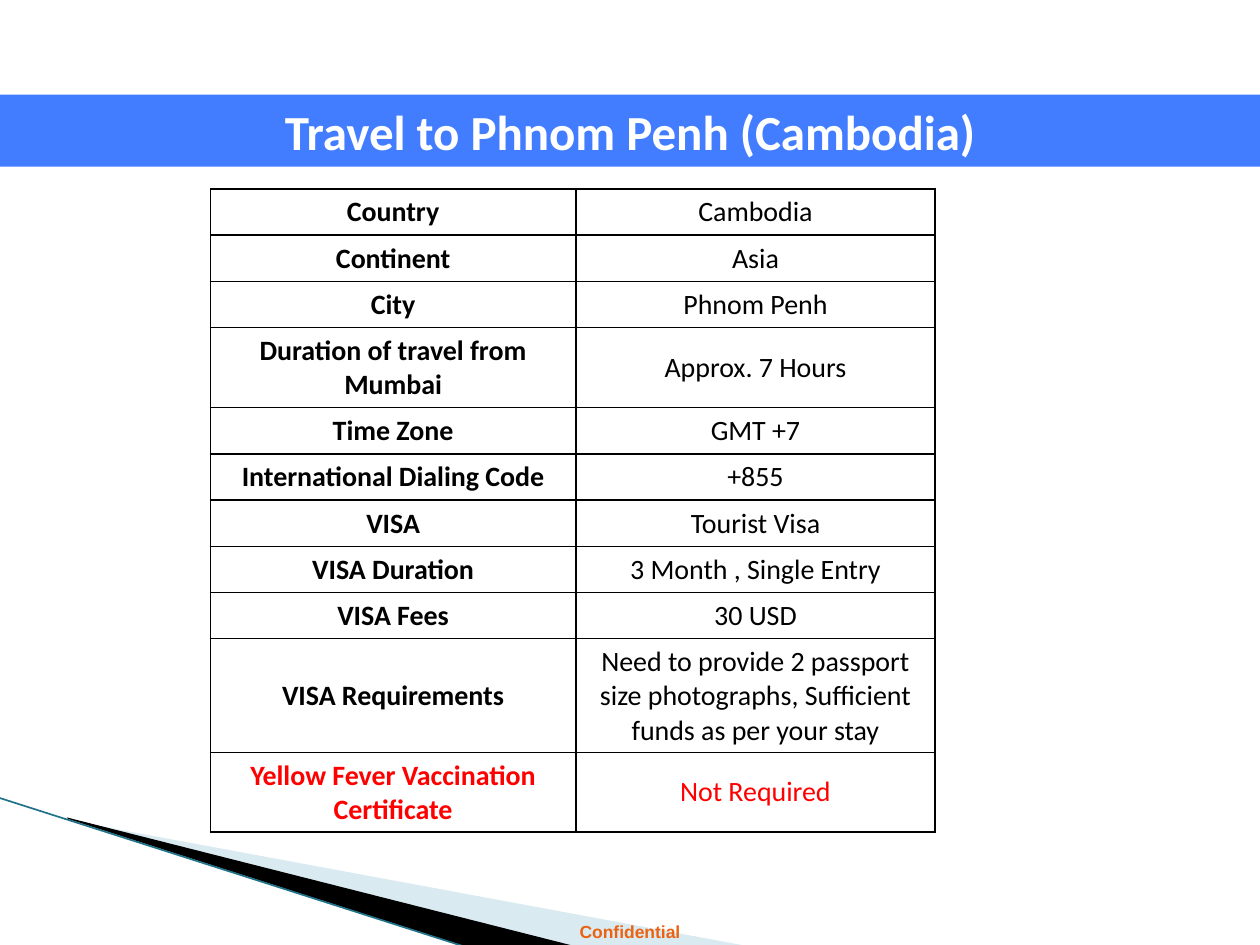
from dataclasses import dataclass

from lxml import etree
from pptx import Presentation
from pptx import util as u
from pptx.dml import color
from pptx.enum import shapes, text
from pptx.oxml import ns


@dataclass(frozen=True)
class Theme:
    banner: str = "437DFF"
    white: str = "FFFFFF"
    ink: str = "000000"
    alert: str = "FF0000"
    notice: str = "EB6312"
    wedge: str = "A0CBDC"
    edge: str = "1F7287"
    body_font: str = "Calibri"
    notice_font: str = "Arial"
    title_size: int = 28
    table_size: int = 16
    notice_size: int = 10
    border: float = 1
    edge_width: float = 0.95


THEME = Theme()
PAGE_WIDTH, PAGE_HEIGHT = 25.4, 19.05

FACTS = [
    ("Country", "Cambodia", 1),
    ("Continent", "Asia", 1),
    ("City", "Phnom Penh", 1),
    ("Duration of travel from Mumbai", "Approx. 7 Hours", 2),
    ("Time Zone", "GMT +7", 1),
    ("International Dialing Code", "+855", 1),
    ("VISA", "Tourist Visa", 1),
    ("VISA Duration", "3 Month , Single Entry", 1),
    ("VISA Fees", "30 USD", 1),
    ("VISA Requirements", "Need to provide 2 passport size photographs, "
     "Sufficient funds as per your stay", 3),
    ("Yellow Fever Vaccination Certificate", "Not Required", 2),
]
COLUMN_WIDTHS = (7.37, 7.24)
LINE_HEIGHT, ROW_PADDING = 0.68, 0.25


def rgb(value):
    return color.RGBColor.from_string(value)


def add_element(parent, tag, **attributes):
    return etree.SubElement(parent, ns.qn(tag), attributes)


def fill_solid(target, value):
    target.fill.solid()
    target.fill.fore_color.rgb = rgb(value)


def write_text(frame, words, ink, **formats):
    para = frame.paragraphs[0]
    para.alignment = text.PP_ALIGN.CENTER
    span = para.add_run()
    span.text = words
    span.font.color.rgb = rgb(ink)
    for name, value in formats.items():
        setattr(span.font, name, value)


def place(box, left, top, width, height):
    lengths = {"left": left, "top": top, "width": width, "height": height}
    for name, value in lengths.items():
        setattr(box, name, u.Cm(value))


def add_title(page, words):
    title = page.shapes.title
    place(title, 0, 1.91, PAGE_WIDTH, 1.45)
    fill_solid(title, THEME.banner)
    title.text_frame.vertical_anchor = text.MSO_ANCHOR.MIDDLE
    write_text(title.text_frame, words, THEME.white, bold=True,
               size=u.Pt(THEME.title_size), name=THEME.body_font)


def add_wedge(page, points, fill, opacity=100):
    corners = [(u.Cm(x), u.Cm(y)) for x, y in points]
    builder = page.shapes.build_freeform(*corners[0])
    builder.add_line_segments(corners[1:], close=True)
    wedge = builder.convert_to_shape()
    wedge.shadow.inherit = False
    wedge.line.fill.background()
    fill_solid(wedge, fill)
    if opacity < 100:
        tint = wedge.fill._xPr.find(".//" + ns.qn("a:srgbClr"))
        add_element(tint, "a:alpha", val=str(opacity * 1000))


def add_edge(page, start, end):
    edge = page.shapes.add_connector(
        shapes.MSO_CONNECTOR.STRAIGHT, *map(u.Cm, start + end))
    edge.line.color.rgb = rgb(THEME.edge)
    edge.line.width = u.Pt(THEME.edge_width)
    add_element(edge._element.spPr, "a:effectLst")


def add_notice(page, words):
    box = page.shapes.add_textbox(0, u.Cm(18.44), u.Cm(PAGE_WIDTH), u.Cm(0.69))
    box.text_frame.word_wrap = True
    write_text(box.text_frame, words, THEME.notice, bold=True,
               size=u.Pt(THEME.notice_size), name=THEME.notice_font)


def format_cell(cell, words, ink, bold):
    cell.vertical_anchor = text.MSO_ANCHOR.MIDDLE
    write_text(cell.text_frame, words, ink, bold=bold,
               size=u.Pt(THEME.table_size), name=THEME.body_font)
    properties = cell._tc.get_or_add_tcPr()
    for side in ("L", "R", "T", "B"):
        border = add_element(properties, "a:ln" + side,
                             w=str(u.Pt(THEME.border)))
        paint = add_element(border, "a:solidFill")
        add_element(paint, "a:srgbClr", val=THEME.ink)
    cell.fill.background()


def add_facts(page):
    heights = [ROW_PADDING + LINE_HEIGHT * lines for _, _, lines in FACTS]
    table = page.shapes.add_table(
        len(FACTS), len(COLUMN_WIDTHS), u.Cm(4.24), u.Cm(3.81),
        u.Cm(sum(COLUMN_WIDTHS)), u.Cm(sum(heights))).table
    table.first_row = table.horz_banding = False
    for column, width in zip(table.columns, COLUMN_WIDTHS):
        column.width = u.Cm(width)
    for index, (label, value, _) in enumerate(FACTS):
        table.rows[index].height = u.Cm(heights[index])
        ink = THEME.alert if index == len(FACTS) - 1 else THEME.ink
        format_cell(table.cell(index, 0), label, ink, True)
        format_cell(table.cell(index, 1), value, ink, False)


def main():
    deck = Presentation()
    deck.slide_width = u.Cm(PAGE_WIDTH)
    deck.slide_height = u.Cm(PAGE_HEIGHT)
    page = deck.slides.add_slide(deck.slide_layouts.get_by_name("Title Only"))
    add_wedge(page, [(1.4, 16.54), (15.11, 19.08), (11.58, 19.08),
                     (1.4, 16.51)], THEME.wedge, 40)
    add_wedge(page, [(1.35, 16.48), (11.61, 19.08), (9.45, 19.1),
                     (1.37, 16.51)], THEME.ink)
    add_edge(page, (-0.03, 16.08), (9.42, 19.1))
    add_notice(page, "Confidential")
    add_title(page, "Travel to Phnom Penh (Cambodia)")
    add_facts(page)
    deck.save("out.pptx")


if __name__ == "__main__":
    main()
